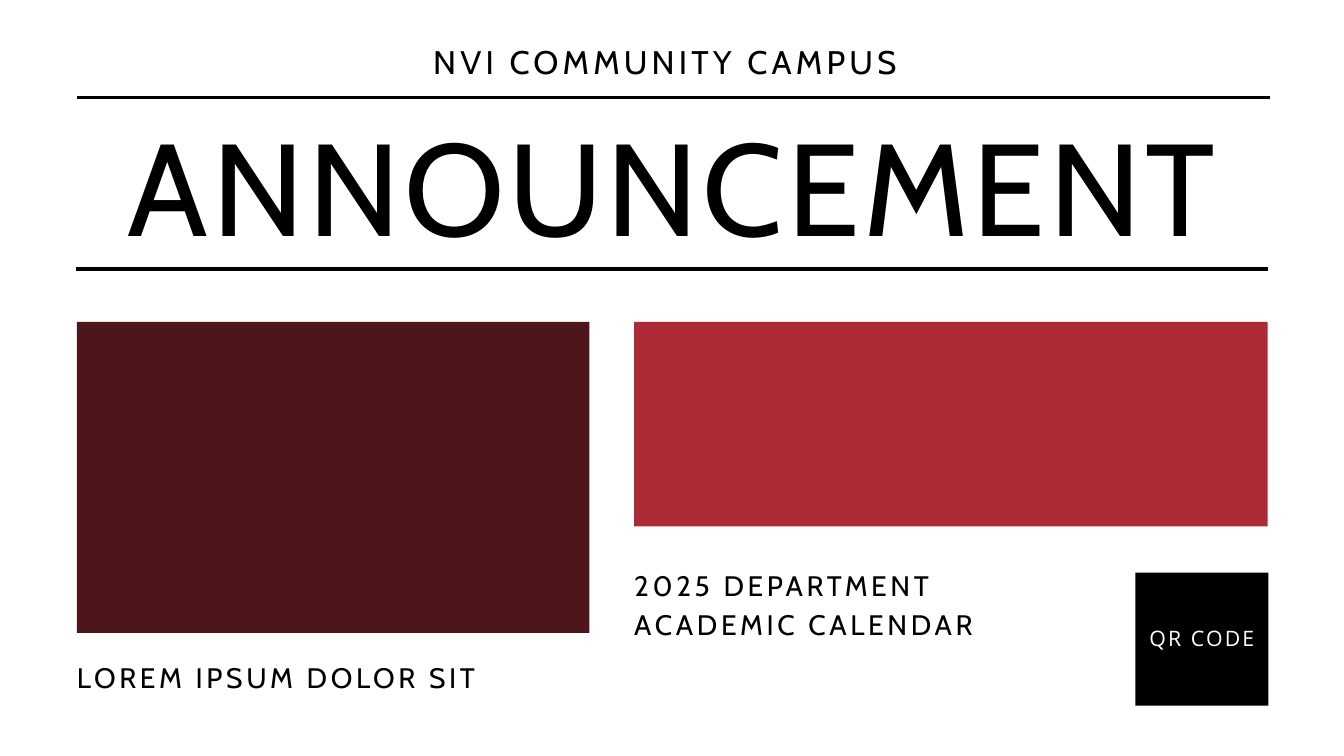
from pptx import Presentation
from pptx.dml.color import RGBColor
from pptx.enum.shapes import MSO_CONNECTOR, MSO_SHAPE
from pptx.enum.text import MSO_ANCHOR, PP_ALIGN
from pptx.oxml.ns import qn
from pptx.util import Emu, Pt
from lxml import etree

BLACK, WHITE, MAROON, RED = "000000", "FFFFFF", "4D161A", "AC2B37"
LEFT, CENTER = PP_ALIGN.LEFT, PP_ALIGN.CENTER
TOP, MIDDLE = MSO_ANCHOR.TOP, MSO_ANCHOR.MIDDLE

# Content: boxes are left, top, width, height in px
PANELS = [
    ((110, 460, 732, 444), MAROON),
    ((906, 460, 905, 292), RED),
    ((1622, 818, 190, 190), BLACK),  # code placeholder
]
RULES = [(108, 384), (110, 139)]  # left, top
RULE_WIDTH = 1704

# Text styles: font, size, line spacing, letter spacing (pt), colour
CODE = ("Open Sans", 22.8, 29.6, 2.3, WHITE)
TITLE = ("Cabin", 140, 196, 4.3, BLACK)
HEADER = ("Cabin", 35, 49, 4.5, BLACK)
CAPTION = ("Cabin", 30.2, 42.2, 3.9, BLACK)

# Box, lines, style, alignment, anchor, inset
TEXTS = [
    ((1622, 813, 190, 194), ["QR CODE"], CODE, CENTER, MIDDLE, 6),
    ((108, 114, 1704, 279), ["ANNOUNCEMENT"], TITLE, CENTER, TOP, 0),
    ((565, 50, 770, 70), ["NVI COMMUNITY CAMPUS"], HEADER, CENTER, TOP, 0),
    ((110, 935, 825, 60), ["LOREM IPSUM DOLOR SIT"], CAPTION, LEFT, TOP, 0),
    ((906, 804, 660, 117), ["2025 DEPARTMENT", "ACADEMIC CALENDAR"],
     CAPTION, LEFT, TOP, 0),
]


def px(n):
    return Emu(n * 9525)


def rgb(color):
    return RGBColor.from_string(color)


def add_panel(s, box, color):
    sp = s.shapes.add_shape(MSO_SHAPE.RECTANGLE, *map(px, box))
    sp.shadow.inherit = False
    sp.fill.solid()
    sp.fill.fore_color.rgb = rgb(color)
    sp.line.fill.background()


def add_rule(s, x, y):
    line = s.shapes.add_connector(
        MSO_CONNECTOR.STRAIGHT, px(x), px(y), px(x + RULE_WIDTH), px(y))
    line.line.color.rgb = rgb(BLACK)
    line.line.width = Pt(3.75)
    etree.SubElement(line._element.spPr, qn("a:effectLst"))


def add_text(s, box, lines, style, align, anchor, inset):
    font, size, leading, tracking, color = style
    tf = s.shapes.add_textbox(*map(px, box)).text_frame
    tf.word_wrap = True
    tf.vertical_anchor = anchor
    tf.margin_left = tf.margin_right = px(inset)
    tf.margin_top = tf.margin_bottom = px(inset)
    for i, line in enumerate(lines):
        p = tf.add_paragraph() if i else tf.paragraphs[0]
        p.alignment = align
        p.line_spacing = Pt(leading)
        r = p.add_run()
        r.text = line
        r.font.name = font
        r.font.size = Pt(size)
        r.font.color.rgb = rgb(color)
        r._r.get_or_add_rPr().set("spc", str(round(tracking * 100)))


def main():
    prs = Presentation()
    prs.slide_width, prs.slide_height = px(1920), px(1080)
    s = prs.slides.add_slide(prs.slide_layouts[6])
    s.background.fill.solid()
    s.background.fill.fore_color.rgb = rgb(WHITE)

    for box, color in PANELS:
        add_panel(s, box, color)
    for x, y in RULES:
        add_rule(s, x, y)
    for text in TEXTS:
        add_text(s, *text)
    prs.save("out.pptx")


if __name__ == "__main__":
    main()
